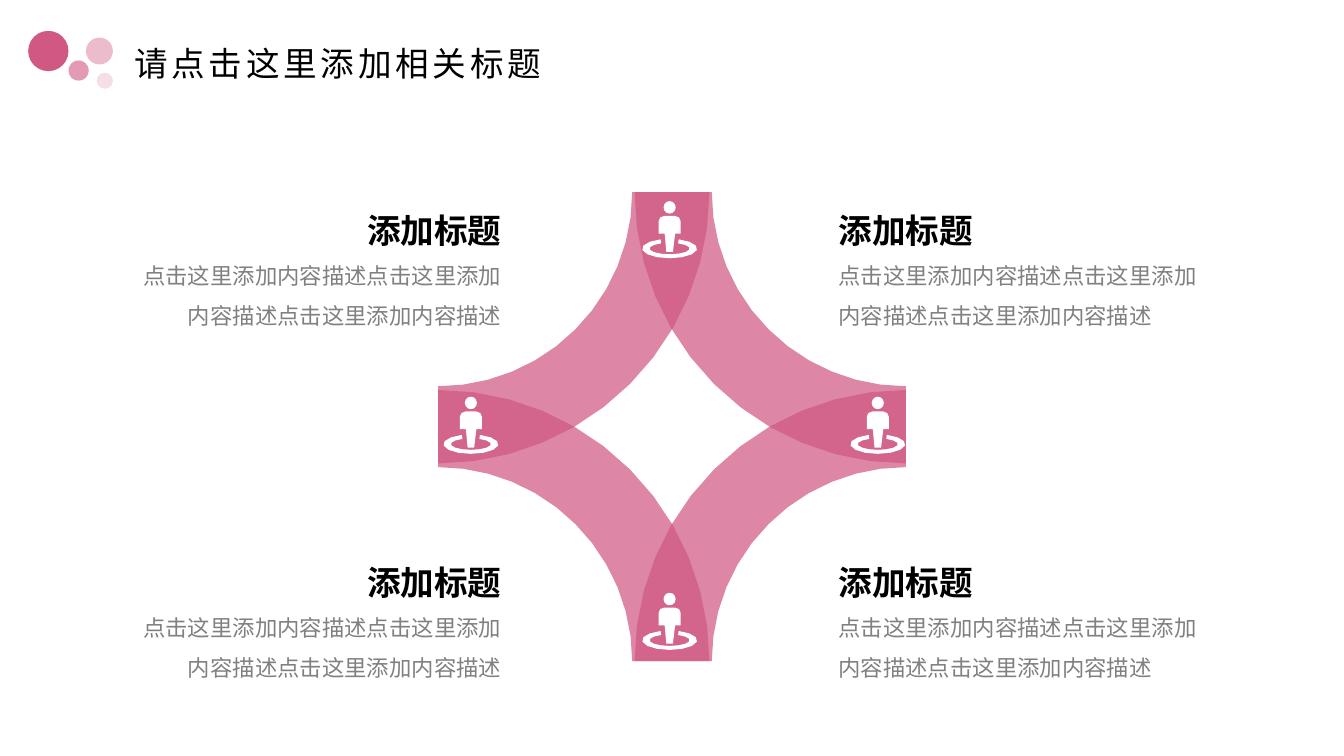
from dataclasses import dataclass
from math import cos, radians, sin

from lxml.etree import SubElement
from pptx import Presentation
from pptx.dml.color import RGBColor
from pptx.enum.shapes import MSO_SHAPE as Shape
from pptx.enum.text import MSO_ANCHOR as Anchor, PP_ALIGN as Align
from pptx.oxml.ns import qn
from pptx.util import Inches, Pt

CELL = Inches(0.1)  # the slide is a grid of square cells
COLUMNS, ROWS = 100, 56.25


@dataclass(frozen=True)
class Theme:
    accent: str = "D05883"
    bubbles: tuple = ("D05883", "E39BB5", "ECBCCD", "F6DEE6")
    icon: str = "FFFFFF"
    heading: str = "000000"
    body: str = "808080"
    band_opacity: int = 72
    heading_font: str = "Noto Sans CJK SC"
    body_font: str = "Calibri"
    heading_size: int = 18
    body_size: int = 12


@dataclass(frozen=True)
class Box:
    left: float
    top: float
    width: float
    height: float

    def emu(self):
        return [round(v * CELL) for v in (self.left, self.top, self.width, self.height)]

    def point(self, x, y):
        """Turn shares of this box into a position on the grid."""
        return self.left + x * self.width, self.top + y * self.height


THEME = Theme()
HEADING = "添加标题"
DESCRIPTION = "点击这里添加内容描述" * 3


def paint(shape, color, opacity=100):
    shape.shadow.inherit = False
    shape.line.fill.background()
    shape.fill.solid()
    shape.fill.fore_color.rgb = RGBColor.from_string(color)
    if opacity < 100:
        tint = shape.fill._xPr.find(".//" + qn("a:srgbClr"))
        SubElement(tint, qn("a:alpha"), val=str(opacity * 1000))


def add_text(slide, box, text, *, font, size, color, bold=False, align=Align.LEFT,
             anchor=Anchor.TOP, line_spacing=1.5, after=6, tracking=0):
    frame = slide.shapes.add_textbox(*box.emu()).text_frame
    frame.word_wrap = True
    frame.vertical_anchor = anchor
    paragraph = frame.paragraphs[0]
    paragraph.alignment = align
    paragraph.line_spacing = line_spacing
    paragraph.space_after = Pt(after)
    run = paragraph.add_run()
    run.text = text
    run.font.name, run.font.size, run.font.bold = font, Pt(size), bold
    run.font.color.rgb = RGBColor.from_string(color)
    properties = run._r.get_or_add_rPr()
    SubElement(properties, qn("a:ea"), typeface=font)
    if tracking:
        properties.set("spc", str(tracking * 100))


def arc(center, radius_x, radius_y, start, end, steps=12):
    """Points along an ellipse, with angles in degrees, clockwise from the right."""
    angles = [radians(start + (end - start) * i / steps) for i in range(steps + 1)]
    return [(center[0] + radius_x * cos(a), center[1] + radius_y * sin(a)) for a in angles]


def add_outline(slide, contours, color, opacity=100):
    scaled = [[(x * CELL, y * CELL) for x, y in contour] for contour in contours]
    builder = slide.shapes.build_freeform(*scaled[0][0], scale=1.0)
    for index, contour in enumerate(scaled):
        if index:
            builder.move_to(*contour[0])
        builder.add_line_segments(contour[1:], close=True)
    paint(builder.convert_to_shape(), color, opacity)


def add_header(slide, box):
    bubbles = [(2.1, 2.3, 3), (5.1, 4.5, 1.5), (6.4, 2.8, 2), (7.2, 5.4, 1.2)]
    for (x, y, size), color in zip(bubbles, THEME.bubbles):
        spot = Box(box.left + x, box.top + y, size, size)
        paint(slide.shapes.add_shape(Shape.OVAL, *spot.emu()), color)
    title = Box(box.left + 9, box.top + 1.9, 86.2, 5.9)
    add_text(slide, title, "请点击这里添加相关标题", font=THEME.heading_font,
             size=THEME.heading_size, color=THEME.heading, anchor=Anchor.MIDDLE,
             line_spacing=0.9, after=0, tracking=2)


def add_person(slide, box):
    """A standing figure inside an open ring."""
    middle = box.point(0.5, 0.83)
    ring = (arc(middle, 0.5 * box.width, 0.17 * box.height, -71, 251)
            + arc(middle, 0.365 * box.width, 0.1 * box.height, 245, -65))
    corner = 0.1 * box.width, 0.09 * box.height
    shoulders = (arc(box.point(0.4, 0.35), *corner, 180, 270, steps=2)
                 + arc(box.point(0.6, 0.35), *corner, 270, 360, steps=2))
    legs = [box.point(x, y) for x, y in
            [(0.7, 0.57), (0.6, 0.57), (0.56, 0.89), (0.44, 0.89), (0.41, 0.57), (0.3, 0.57)]]
    head = arc(box.point(0.5, 0.11), 0.11 * box.width, 0.11 * box.height, 0, 360)
    add_outline(slide, [ring, shoulders + legs, head[:-1]], THEME.icon)


def add_star(slide, box):
    """Four quarter rings about the box corners, with a person where they cross."""
    outer, inner = 0.58 * box.width, 0.415 * box.width
    for x, y, start in [(1, 0, 90), (0, 0, 0), (1, 1, 180), (0, 1, 270)]:
        corner = box.point(x, y)
        band = (arc(corner, outer, outer, start, start + 90)
                + arc(corner, inner, inner, start + 90, start))
        add_outline(slide, [band], THEME.accent, THEME.band_opacity)
    width, height = 4.1, 4.25
    for x, y in [(0.495, 0.08), (0.495, 0.915), (0.94, 0.497), (0.07, 0.497)]:
        center_x, center_y = box.point(x, y)
        add_person(slide, Box(center_x - width / 2, center_y - height / 2, width, height))


def add_caption(slide, box, align):
    heading_width = 16
    shift = box.width - heading_width if align == Align.RIGHT else 0
    add_text(slide, Box(box.left + shift, box.top, heading_width, 5.1), HEADING,
             font=THEME.heading_font, size=THEME.heading_size, color=THEME.heading,
             bold=True, align=align, anchor=Anchor.MIDDLE)
    add_text(slide, Box(box.left, box.top + 4.2, box.width, 6.7), DESCRIPTION,
             font=THEME.body_font, size=THEME.body_size, color=THEME.body, align=align)


def main():
    deck = Presentation()
    deck.slide_width, deck.slide_height = round(COLUMNS * CELL), round(ROWS * CELL)
    slide = deck.slides.add_slide(deck.slide_layouts[6])
    add_header(slide, Box(0, 0, COLUMNS, 8))
    add_star(slide, Box(32.6, 14.3, 34.8, 34.9))
    for left, align in [(61.4, Align.LEFT), (8.2, Align.RIGHT)]:
        for top in (13.8, 40):
            add_caption(slide, Box(left, top, 30.1, 10.9), align)
    deck.save("out.pptx")


if __name__ == "__main__":
    main()
